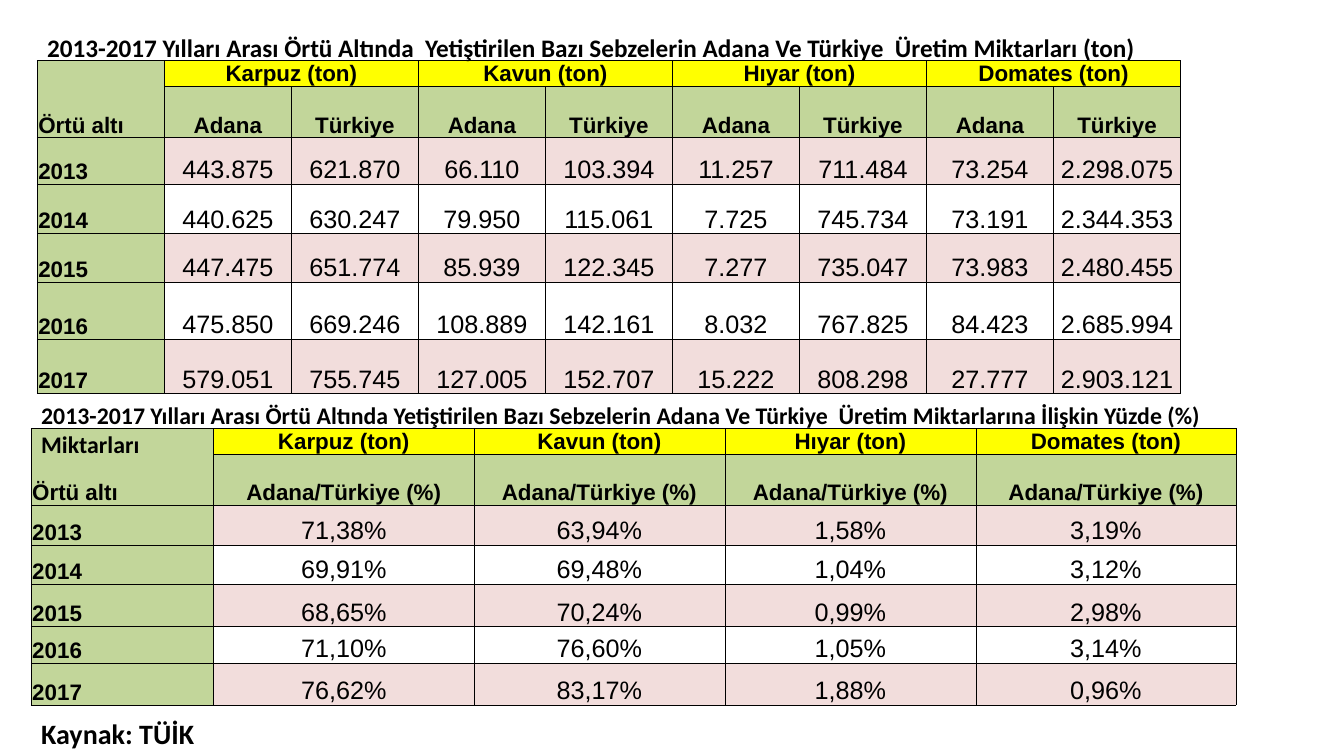
from lxml.etree import SubElement
from pptx import Presentation
from pptx.dml.color import RGBColor
from pptx.enum.text import MSO_ANCHOR, PP_ALIGN
from pptx.oxml.ns import qn
from pptx.util import Inches, Pt

BLACK = RGBColor(0x00, 0x00, 0x00)
GREEN = RGBColor(0xC2, 0xD6, 0x9A)
YELLOW = RGBColor(0xFF, 0xFF, 0x00)
PINK = RGBColor(0xF2, 0xDD, 0xDC)

PRODUCTS = ["Karpuz (ton)", "Kavun (ton)", "Hıyar (ton)", "Domates (ton)"]
HEADER_HEIGHTS = [0.25, 0.51]

AMOUNTS = {
    "2013": ["443.875", "621.870", "66.110", "103.394",
             "11.257", "711.484", "73.254", "2.298.075"],
    "2014": ["440.625", "630.247", "79.950", "115.061",
             "7.725", "745.734", "73.191", "2.344.353"],
    "2015": ["447.475", "651.774", "85.939", "122.345",
             "7.277", "735.047", "73.983", "2.480.455"],
    "2016": ["475.850", "669.246", "108.889", "142.161",
             "8.032", "767.825", "84.423", "2.685.994"],
    "2017": ["579.051", "755.745", "127.005", "152.707",
             "15.222", "808.298", "27.777", "2.903.121"],
}
SHARES = {
    "2013": ["71,38%", "63,94%", "1,58%", "3,19%"],
    "2014": ["69,91%", "69,48%", "1,04%", "3,12%"],
    "2015": ["68,65%", "70,24%", "0,99%", "2,98%"],
    "2016": ["71,10%", "76,60%", "1,05%", "3,14%"],
    "2017": ["76,62%", "83,17%", "1,88%", "0,96%"],
}


def set_font(paragraph, name, size, bold):
    paragraph.font.color.rgb = BLACK
    for attribute, value in {"name": name, "size": Pt(size), "bold": bold}.items():
        setattr(paragraph.font, attribute, value)


def add_borders(cell):
    properties = cell._tc.get_or_add_tcPr()
    for side in ("a:lnL", "a:lnR", "a:lnT", "a:lnB"):
        line = SubElement(properties, qn(side), w=str(Pt(0.5)))
        fill = SubElement(line, qn("a:solidFill"))
        SubElement(fill, qn("a:srgbClr"), val=str(BLACK))


def fill_cell(cell, text, color=None, size=16, bold=True, align=PP_ALIGN.CENTER):
    cell.text = text
    cell_format = {
        "vertical_anchor": MSO_ANCHOR.BOTTOM,
        "margin_left": Inches(0.01),
        "margin_top": Inches(0.01),
        "margin_right": Inches(0.01),
        "margin_bottom": 0,
    }
    for attribute, value in cell_format.items():
        setattr(cell, attribute, value)
    if color is None:
        cell.fill.background()
    else:
        cell.fill.solid()
        cell.fill.fore_color.rgb = color
    paragraph = cell.text_frame.paragraphs[0]
    paragraph.alignment = align
    set_font(paragraph, "Arial", size, bold)


def add_year_table(slide, left, top, widths, year_heights, subheads, data):
    heights = HEADER_HEIGHTS + year_heights
    table = slide.shapes.add_table(
        len(heights), len(widths), Inches(left), Inches(top),
        Inches(sum(widths)), Inches(sum(heights))).table
    table.first_row = table.horz_banding = False
    for column, width in zip(table.columns, widths):
        column.width = Inches(width)
    for row, height in zip(table.rows, heights):
        row.height = Inches(height)
    for cell in table.iter_cells():
        add_borders(cell)

    # Two header rows: product groups above their subheads
    table.cell(0, 0).merge(table.cell(1, 0))
    fill_cell(table.cell(0, 0), "Örtü altı", GREEN, align=PP_ALIGN.LEFT)
    span = len(subheads)
    for group, product in enumerate(PRODUCTS):
        first = 1 + group * span
        if span > 1:
            table.cell(0, first).merge(table.cell(0, first + span - 1))
        fill_cell(table.cell(0, first), product, YELLOW)
        for offset, subhead in enumerate(subheads):
            fill_cell(table.cell(1, first + offset), subhead, GREEN)

    # One row per year, every other one tinted
    for index, (year, values) in enumerate(data.items()):
        row = index + len(HEADER_HEIGHTS)
        fill_cell(table.cell(row, 0), year, GREEN, align=PP_ALIGN.LEFT)
        tint = PINK if index % 2 == 0 else None
        for column, value in enumerate(values, start=1):
            fill_cell(table.cell(row, column), value, tint, size=18, bold=False)


def add_caption(slide, left, top, width, height, text, size):
    box = slide.shapes.add_textbox(
        Inches(left), Inches(top), Inches(width), Inches(height))
    box.text_frame.word_wrap = True
    paragraph = box.text_frame.paragraphs[0]
    paragraph.text = text
    set_font(paragraph, "Calibri", size, True)


def main():
    presentation = Presentation()
    presentation.slide_width = Inches(13.33)
    presentation.slide_height = Inches(7.5)
    slide = presentation.slides.add_slide(presentation.slide_layouts[6])

    # Production amounts, then Adana's share of them
    add_year_table(slide, 0.37, 0.6, [1.26] * 9, [0.46, 0.49, 0.48, 0.57, 0.54],
                   ["Adana", "Türkiye"], AMOUNTS)
    add_year_table(slide, 0.31, 4.25, [1.81, 2.58, 2.49, 2.49, 2.58],
                   [0.39, 0.39, 0.42, 0.36, 0.42], ["Adana/Türkiye (%)"], SHARES)

    # Table titles and source line
    add_caption(slide, 0.37, 0.27, 11.84, 0.4,
                "2013-2017 Yılları Arası Örtü Altında  Yetiştirilen Bazı Sebzelerin "
                "Adana Ve Türkiye  Üretim Miktarları (ton)", 18)
    add_caption(slide, 0.31, 3.93, 12.72, 0.39,
                "2013-2017 Yılları Arası Örtü Altında Yetiştirilen Bazı Sebzelerin "
                "Adana Ve Türkiye  Üretim Miktarlarına İlişkin Yüzde (%) Miktarları", 17)
    add_caption(slide, 0.31, 7.06, 6.49, 0.44, "Kaynak: TÜİK", 20)

    presentation.save("out.pptx")


if __name__ == "__main__":
    main()
